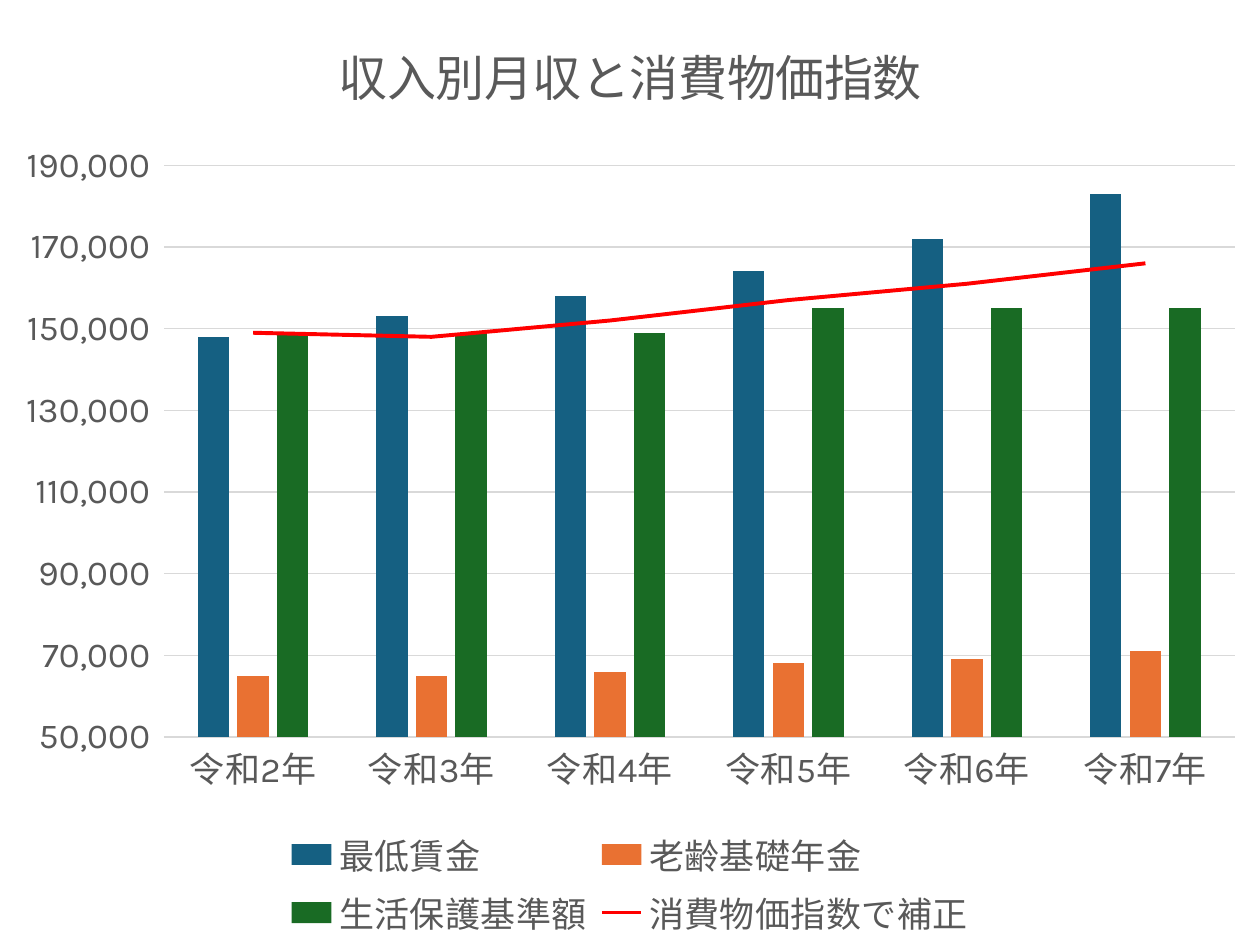
"""Build a slide charting monthly income by source against consumer prices."""
from lxml import etree
from pptx import Presentation
from pptx import util as u
from pptx.chart.data import CategoryChartData
from pptx.dml.color import RGBColor
from pptx.enum import chart as charts
from pptx.oxml import parse_xml
from pptx.oxml.ns import nsdecls, qn

GREY = RGBColor(0x59, 0x59, 0x59)
GRID = RGBColor(0xD9, 0xD9, 0xD9)
BLUE = RGBColor(0x15, 0x60, 0x82)
ORANGE = RGBColor(0xE9, 0x71, 0x32)
GREEN = RGBColor(0x19, 0x6B, 0x24)
RED = RGBColor(0xFF, 0x00, 0x00)

YEARS = [f"令和{year}年" for year in range(2, 8)]
INCOMES = [
    ("最低賃金", BLUE, (148000, 153000, 158000, 164000, 172000, 183000)),
    ("老齢基礎年金", ORANGE, (65000, 65000, 66000, 68000, 69000, 71000)),
    ("生活保護基準額", GREEN, (149000, 149000, 149000, 155000, 155000, 155000)),
]
PRICES = ("消費物価指数で補正", RED, (149000, 148000, 152000, 157000, 161000, 166000))


def write_text(frame, content, *, font, size, color):
    """Write one formatted paragraph into a text frame."""
    para = frame.paragraphs[0]
    span = para.add_run()
    span.text = content
    style_font(span.font, font=font, size=size, color=color)


def style_font(target, *, font, size, color):
    """Apply a typeface, size and colour to a font."""
    target.name = font
    target.size = u.Pt(size)
    target.bold = False
    target.color.rgb = color


def remove_children(parent, tag):
    """Remove every direct child with the given tag."""
    for element in parent.findall(qn(tag)):
        parent.remove(element)


def manual_layout(x, y, width, height, inner=False):
    """Return a layout element given in fractions of the chart area."""
    target = '<c:layoutTarget val="inner"/>' if inner else ""
    return parse_xml(
        f'<c:layout {nsdecls("c")}><c:manualLayout>{target}'
        '<c:xMode val="edge"/><c:yMode val="edge"/>'
        f'<c:x val="{x}"/><c:y val="{y}"/><c:w val="{width}"/><c:h val="{height}"/>'
        "</c:manualLayout></c:layout>"
    )


def move_last_series_to_line(chart):
    """Turn the last column series into a line on the same axes."""
    bars = chart.plots[0]._element
    series = bars.findall(qn("c:ser"))[-1]
    remove_children(series, "c:invertIfNegative")
    line = parse_xml(
        f'<c:lineChart {nsdecls("c")}><c:grouping val="standard"/>'
        '<c:varyColors val="0"/></c:lineChart>'
    )
    line.append(series)
    etree.SubElement(line, qn("c:marker")).set("val", "1")
    for axis in bars.findall(qn("c:axId")):
        etree.SubElement(line, qn("c:axId")).set("val", axis.get("val"))
    bars.addnext(line)


class SlideBuilder:
    """Hold the style and the current slide."""

    def __init__(self, page, font="Karla", color=GREY):
        self.page = page
        self.font = font
        self.color = color

    def style_axis(self, axis):
        """Apply the shared axis look."""
        style_font(axis.tick_labels.font, font=self.font, size=20, color=self.color)
        axis.major_tick_mark = axis.minor_tick_mark = charts.XL_TICK_MARK.NONE

    def add_income_chart(self, title, left, top, width, height):
        """Add the combined column and line chart."""
        data = CategoryChartData(number_format="#,##0")
        data.categories = YEARS
        for name, _, values in [*INCOMES, PRICES]:
            data.add_series(name, values)
        chart = self.page.shapes.add_chart(
            charts.XL_CHART_TYPE.COLUMN_CLUSTERED, left, top, width, height, data
        ).chart
        style_font(chart.font, font=self.font, size=10, color=self.color)
        write_text(chart.chart_title.text_frame, title,
                   font=self.font, size=28, color=self.color)
        chart.chart_title.include_in_layout = False

        move_last_series_to_line(chart)
        columns, line = chart.plots
        columns.gap_width, columns.overlap = 219, -27
        columns.vary_by_categories = False
        for series, (_, color, _) in zip(columns.series, INCOMES):
            series.format.fill.solid()
            series.format.fill.fore_color.rgb = color
        prices = line.series[0]
        prices.format.line.color.rgb = PRICES[1]
        prices.format.line.width = u.Pt(2.25)
        prices.marker.style = charts.XL_MARKER_STYLE.NONE
        prices.smooth = False

        years, amounts = chart.category_axis, chart.value_axis
        for axis in (years, amounts):
            self.style_axis(axis)
        amounts.minimum_scale, amounts.maximum_scale = 50000, 190000
        amounts.major_unit = 20000
        amounts.tick_labels.number_format = r"#,##0_);[Red]\(#,##0\)"
        amounts.tick_labels.number_format_is_linked = False
        amounts.format.line.fill.background()
        for rule in (years.format.line, amounts.major_gridlines.format.line):
            rule.color.rgb = GRID
            rule.width = u.Pt(0.75)

        chart.has_legend = True
        legend = chart.legend
        legend.position = charts.XL_LEGEND_POSITION.BOTTOM
        legend.include_in_layout = False
        style_font(legend.font, font=self.font, size=20, color=self.color)
        remove_children(legend._element, "c:layout")
        legend._element.find(qn("c:legendPos")).addnext(
            manual_layout(0.22, 0.87, 0.56, 0.13))
        plot_area = columns._element.getparent()
        remove_children(plot_area, "c:layout")
        plot_area.insert(0, manual_layout(0.13, 0.175, 0.85, 0.605, inner=True))


def main():
    """Build and save the deck."""
    deck = Presentation()
    deck.slide_width, deck.slide_height = u.Inches(10), u.Inches(7.5)
    page = deck.slides.add_slide(deck.slide_layouts[6])
    SlideBuilder(page).add_income_chart(
        "収入別月収と消費物価指数", u.Inches(0), u.Inches(0), u.Inches(10), u.Inches(7.5))
    deck.save("out.pptx")


if __name__ == "__main__":
    main()
